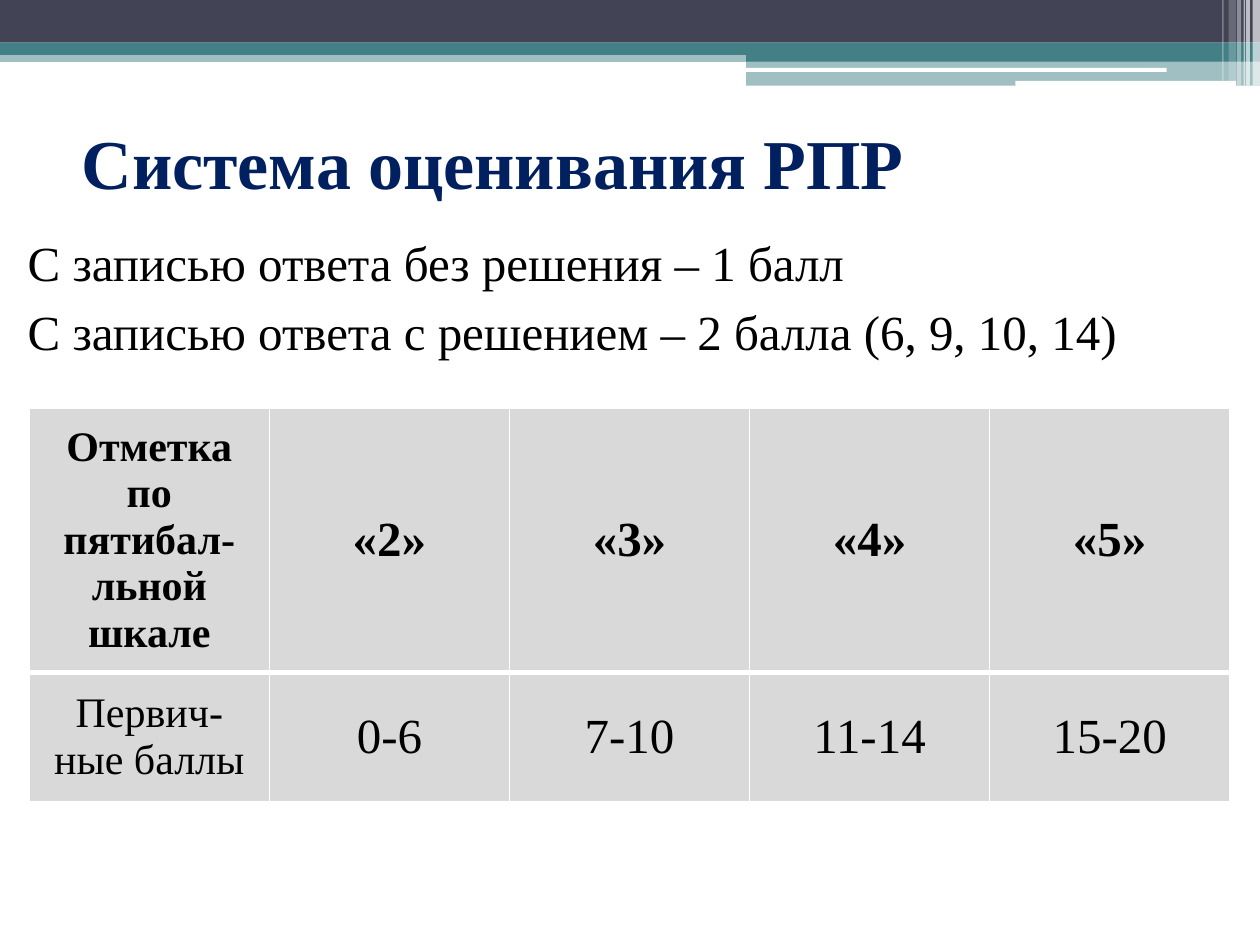
from lxml import etree
from pptx import Presentation
from pptx.dml.color import RGBColor
from pptx.enum.shapes import MSO_SHAPE
from pptx.enum.text import MSO_ANCHOR, PP_ALIGN
from pptx.oxml.ns import qn
from pptx.util import Cm, Pt

RECT = MSO_SHAPE.RECTANGLE
ROUND = MSO_SHAPE.ROUNDED_RECTANGLE
MIDDLE = MSO_ANCHOR.MIDDLE
CENTER = PP_ALIGN.CENTER
TEAL, DARK, WHITE = "438086", "424456", "FFFFFF"


def color(code):
    return RGBColor.from_string(code)


def style(para, text, size, code="000000", bold=False):
    para.text = text
    para.font.name = "Times New Roman"
    para.font.size = Pt(size)
    para.font.bold = bold
    para.font.color.rgb = color(code)


prs = Presentation()
prs.slide_width, prs.slide_height = Cm(25.4), Cm(19.05)
slide = prs.slides.add_slide(prs.slide_layouts[6])

# Header bands, white strips and edge stripes: kind, left, top, width, height, colour, opacity
bars = [
    (RECT, 0, 1.02, 25.4, 0.23, TEAL, 50),
    (RECT, 0, 0, 25.4, 0.86, DARK, 100),
    (RECT, 0, 0.86, 25.4, 0.25, TEAL, 100),
    (RECT, 15.04, 0.99, 10.36, 0.25, TEAL, 100),
    (RECT, 15.04, 1.22, 10.36, 0.51, TEAL, 50),
    (ROUND, 15.01, 1.37, 8.51, 0.08, WHITE, 100),
    (ROUND, 20.47, 1.63, 4.45, 0.1, WHITE, 100),
    (RECT, 25.25, 0, 0.15, 1.73, WHITE, 65),
    (RECT, 25.12, 0, 0.08, 1.73, WHITE, 65),
    (RECT, 25.07, 0, 0.03, 1.73, WHITE, 60),
    (RECT, 24.94, 0, 0.08, 1.73, WHITE, 40),
    (RECT, 24.77, 0, 0.15, 1.63, WHITE, 20),
    (RECT, 24.64, 0, 0.03, 1.63, WHITE, 30),
]
for kind, left, top, width, height, code, alpha in bars:
    bar = slide.shapes.add_shape(kind, Cm(left), Cm(top), Cm(width), Cm(height))
    bar.shadow.inherit = False
    bar.line.fill.background()
    bar.fill.solid()
    bar.fill.fore_color.rgb = color(code)
    if alpha < 100:
        tint = bar.fill._xPr.find(qn("a:solidFill"))[0]
        etree.SubElement(tint, qn("a:alpha"), val=str(alpha * 1000))

# Title
title = slide.shapes.add_textbox(Cm(1.4), Cm(1.78), Cm(22.86), Cm(2.97)).text_frame
title.word_wrap = True
title.vertical_anchor = MIDDLE
style(title.paragraphs[0], "Система оценивания РПР", 40, "002060", True)

# Scoring rules
rules = ["С записью ответа без решения – 1 балл",
         "С записью ответа с решением – 2 балла (6, 9, 10, 14)"]
body = slide.shapes.add_textbox(0, Cm(4.57), Cm(25.4), Cm(2.97)).text_frame
body.word_wrap = True
for i, rule in enumerate(rules):
    para = body.add_paragraph() if i else body.paragraphs[0]
    style(para, rule, 28)
    para.space_before, para.space_after = Pt(3), Pt(2.6)
    props = para._p.get_or_add_pPr()
    props.set("marL", str(Cm(1.02)))
    props.set("indent", str(Cm(-0.71)))

# Grade table
rows = [["Отметка по пятибал-льной шкале", "«2»", "«3»", "«4»", "«5»"],
        ["Первич-ные баллы", "0-6", "7-10", "11-14", "15-20"]]
heights = [4.9, 2.6]
table = slide.shapes.add_table(2, 5, Cm(0.59), Cm(8.22), Cm(24.2), Cm(sum(heights))).table
for col in table.columns:
    col.width = Cm(4.84)
for r, row in enumerate(rows):
    table.rows[r].height = Cm(heights[r])
    for c, text in enumerate(row):
        cell = table.cell(r, c)
        cell.vertical_anchor = MIDDLE
        para = cell.text_frame.paragraphs[0]
        style(para, text, 28 if c else 24, bold=r == 0)
        para.alignment = CENTER
        # White borders, thick between the two rows
        props = cell._tc.get_or_add_tcPr()
        for side in "LRTB":
            thick = (r, side) in [(0, "B"), (1, "T")]
            line = etree.SubElement(props, qn("a:ln" + side), w=str(Pt(3 if thick else 1)))
            fill = etree.SubElement(line, qn("a:solidFill"))
            etree.SubElement(fill, qn("a:srgbClr"), val=WHITE)
        cell.fill.solid()
        cell.fill.fore_color.rgb = color("D9D9D9")

prs.save("out.pptx")
